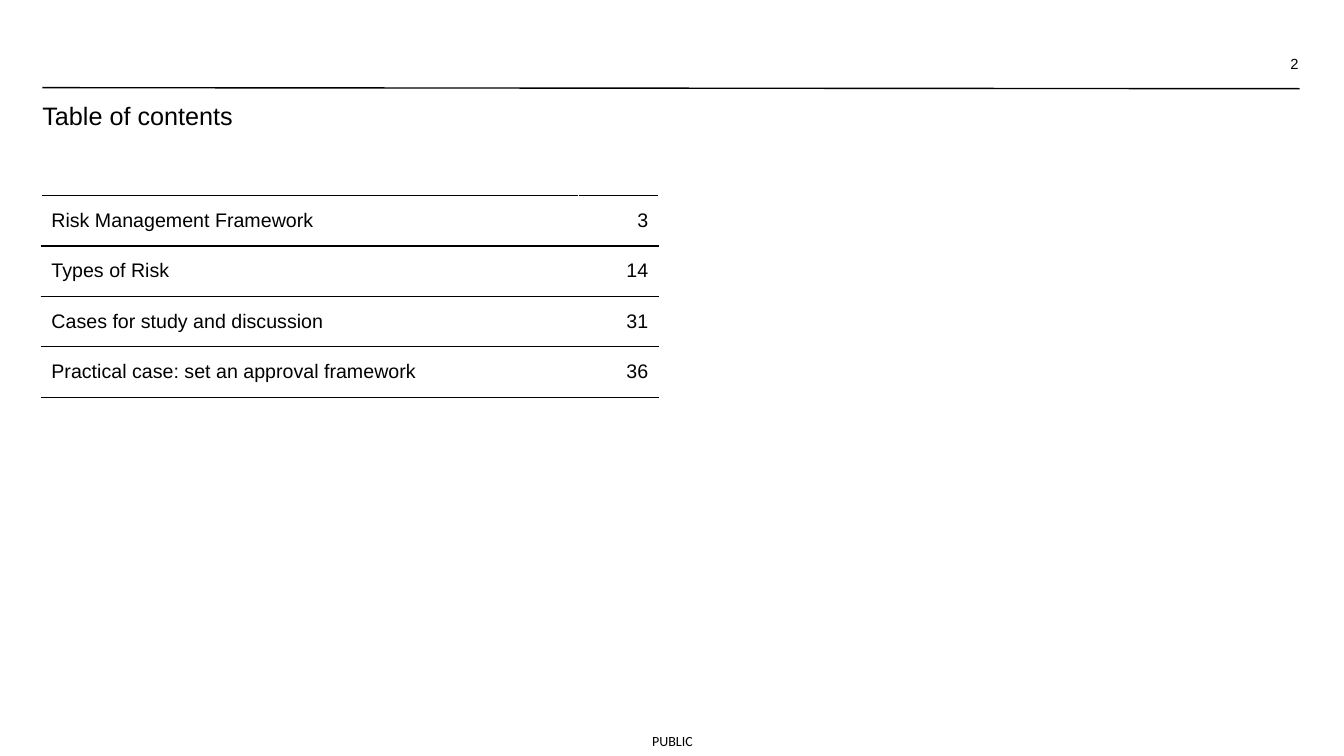
from lxml.etree import SubElement
from pptx import Presentation
from pptx.dml.color import RGBColor
from pptx.enum.shapes import MSO_CONNECTOR as Connector
from pptx.enum.text import MSO_ANCHOR as Anchor, MSO_AUTO_SIZE as AutoSize, PP_ALIGN as Align
from pptx.oxml.ns import qn
from pptx.util import Pt

PX = 9144  # 100 px to the inch
BLACK, WHITE = "000000", "FFFFFF"
CONTENTS = [
    ("Risk Management Framework", "3"),
    ("Types of Risk", "14"),
    ("Cases for study and discussion", "31"),
    ("Practical case: set an approval framework", "36"),
]
COLUMN_WIDTHS = (533, 79)
ROW_HEIGHT = 50


def px(*lengths):
    return [length * PX for length in lengths]


def color(value):
    return RGBColor.from_string(value)


def write(text_frame, text, size, font="Arial", align=Align.LEFT):
    text_frame.text = text
    paragraph = text_frame.paragraphs[0]
    paragraph.alignment = align
    run_font = paragraph.runs[0].font
    run_font.name = font
    run_font.size = Pt(size)
    run_font.color.rgb = color(BLACK)


def format_box(shape, box, text, size, anchor=Anchor.TOP, **style):
    shape.left, shape.top, shape.width, shape.height = px(*box)
    frame = shape.text_frame
    frame.margin_left = frame.margin_right = frame.margin_top = frame.margin_bottom = 0
    frame.word_wrap = True
    frame.auto_size = AutoSize.NONE
    frame.vertical_anchor = anchor
    write(frame, text, size, **style)


def add_text(slide, box, text, size, **style):
    format_box(slide.shapes.add_textbox(*px(*box)), box, text, size, **style)


def add_rule(slide, *ends):
    rule = slide.shapes.add_connector(Connector.STRAIGHT, *px(*ends))
    rule.line.color.rgb = color(BLACK)
    rule.line.width = Pt(1)
    SubElement(rule._element.spPr, qn("a:effectLst"))


def add_borders(cell):
    properties = cell._tc.get_or_add_tcPr()
    for side, value in (("L", WHITE), ("R", WHITE), ("T", BLACK), ("B", BLACK)):
        line = SubElement(properties, qn(f"a:ln{side}"), w=str(Pt(0.96)))
        fill = SubElement(line, qn("a:solidFill"))
        SubElement(fill, qn("a:srgbClr"), val=value)


def add_contents_table(slide, left, top):
    box = px(left, top, sum(COLUMN_WIDTHS), ROW_HEIGHT * len(CONTENTS))
    table = slide.shapes.add_table(len(CONTENTS), len(COLUMN_WIDTHS), *box).table
    table.first_row = table.horz_banding = False
    for column, width in zip(table.columns, COLUMN_WIDTHS):
        column.width = width * PX
    for row, entry in zip(table.rows, CONTENTS):
        row.height = ROW_HEIGHT * PX
        for cell, text, align in zip(row.cells, entry, (Align.LEFT, Align.RIGHT)):
            write(cell.text_frame, text, 14, align=align)
            cell.vertical_anchor = Anchor.MIDDLE
            add_borders(cell)
            cell.fill.background()


def main():
    presentation = Presentation()
    presentation.slide_width, presentation.slide_height = px(1333, 750)
    slide = presentation.slides.add_slide(presentation.slide_layouts[5])

    # Header: rule, title and page number
    add_rule(slide, 42, 87, 1289, 88)
    format_box(slide.shapes.title, (42, 99, 1247, 35), "Table of contents", 18)
    add_text(slide, (991, 54, 297, 33), "2", 10.5, align=Align.RIGHT)

    # Contents
    add_contents_table(slide, 41, 194)

    # Footer: classification
    add_text(slide, (632, 727, 70, 17), "PUBLIC", 10, font="Calibri",
             align=Align.CENTER, anchor=Anchor.MIDDLE)

    presentation.save("out.pptx")


if __name__ == "__main__":
    main()
